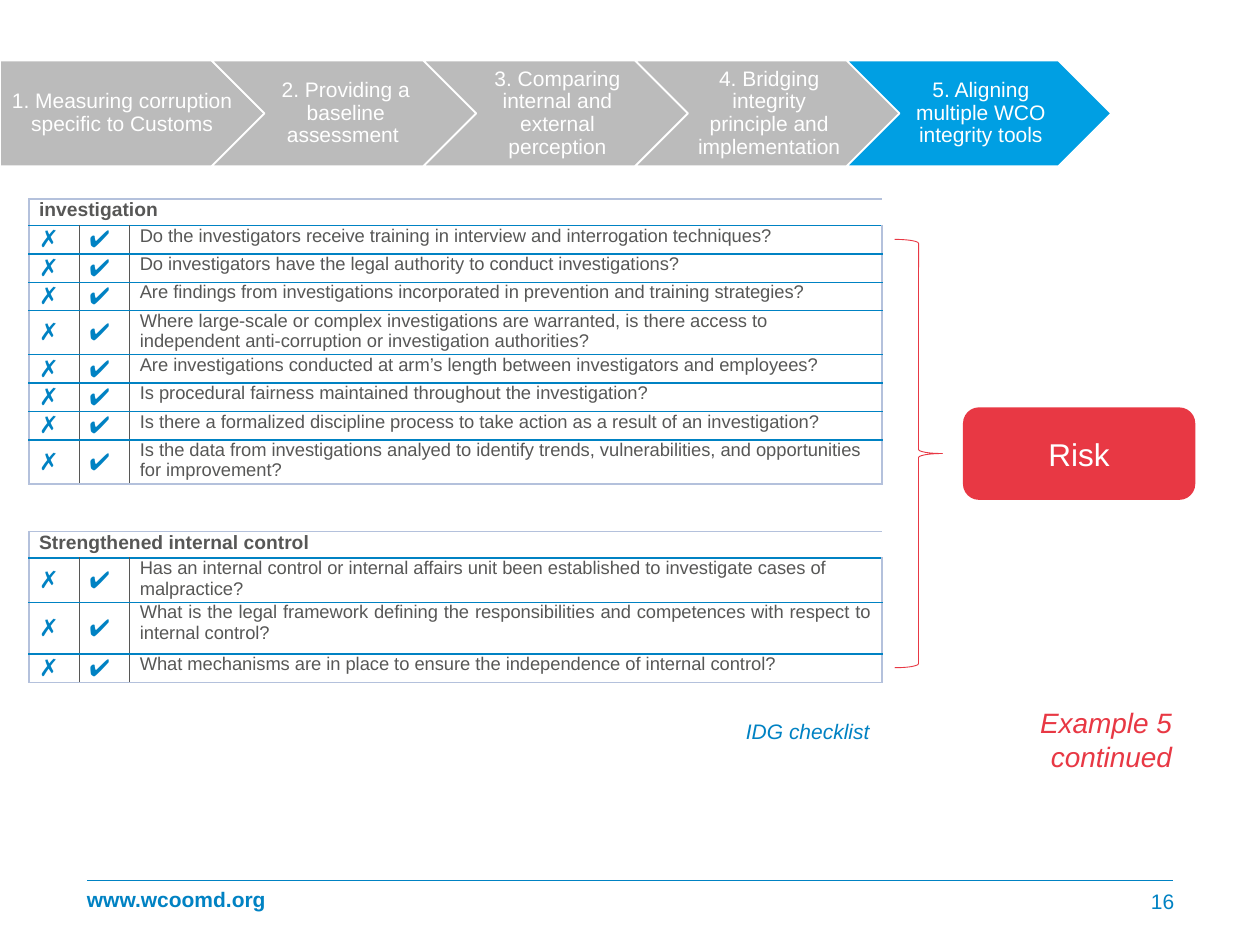
from dataclasses import dataclass
from typing import Optional

import pptx
import pptx.dml.color
import pptx.enum.shapes
import pptx.enum.text
import pptx.oxml.ns
import pptx.util
from lxml import etree

Inches = pptx.util.Inches
Pt = pptx.util.Pt
Shape = pptx.enum.shapes.MSO_SHAPE
Align = pptx.enum.text.PP_ALIGN
Anchor = pptx.enum.text.MSO_ANCHOR
qn = pptx.oxml.ns.qn

BLUE, RED, GREY, WHITE = "0082C3", "E83844", "575756", "FFFFFF"
STEP_GREY, STEP_ACTIVE, FRAME = "BBBBBB", "009FE3", "B4C1DC"
MARKS = ("✗", "✔")
COLUMN_WIDTHS = (0.4, 0.4, 5.97)
INDENT = 0.08


@dataclass
class Style:
    size: float
    color: str
    bold: bool = False
    italic: bool = False
    align: Align = Align.LEFT
    spacing: Optional[float] = None


@dataclass
class Question:
    text: str
    height: float = 0.22
    align: Align = Align.LEFT


@dataclass
class Checklist:
    title: str
    top: float
    questions: list[Question]


STEPS = [
    "1. Measuring corruption specific to Customs",
    "2. Providing a baseline assessment ",
    "3. Comparing internal and external perception",
    "4. Bridging integrity principle and implementation",
    "5. Aligning multiple WCO integrity tools",
]
CHECKLISTS = [
    Checklist("investigation", 1.58, [
        Question("Do the investigators receive training in interview and interrogation techniques?"),
        Question("Do investigators have the legal authority to conduct investigations?",
                 0.21, Align.JUSTIFY),
        Question("Are findings from investigations incorporated in prevention and training strategies?"),
        Question("Where large-scale or complex investigations are warranted, is there access to "
                 "independent anti-corruption or investigation authorities?", 0.32),
        Question("Are investigations conducted at arm’s length between investigators and employees?"),
        Question("Is procedural fairness maintained throughout the investigation?"),
        Question("Is there a formalized discipline process to take action as a result of an investigation?"),
        Question("Is the data from investigations analyed to identify trends, vulnerabilities, and "
                 "opportunities for improvement?", 0.32),
    ]),
    Checklist("Strengthened internal control", 4.22, [
        Question("Has an internal control or internal affairs unit been established to investigate "
                 "cases of malpractice?", 0.35),
        Question("What is the legal framework defining the responsibilities and competences with "
                 "respect to internal control?", 0.41, Align.JUSTIFY),
        Question("What mechanisms are in place to ensure the independence of internal control?"),
    ]),
]


def rgb(value: str) -> pptx.dml.color.RGBColor:
    return pptx.dml.color.RGBColor.from_string(value)


def write(frame, lines: list[str], style: Style) -> None:
    for index, line in enumerate(lines):
        paragraph = frame.add_paragraph() if index else frame.paragraphs[0]
        paragraph.alignment = style.align
        if style.spacing:
            paragraph.line_spacing = style.spacing
        run = paragraph.add_run()
        run.text = line
        run.font.name = "Arial"
        run.font.size = Pt(style.size)
        run.font.bold = style.bold
        run.font.italic = style.italic
        run.font.color.rgb = rgb(style.color)


def set_insets(frame, left: float, top: float, right: float, bottom: float) -> None:
    frame.margin_left, frame.margin_top = Inches(left), Inches(top)
    frame.margin_right, frame.margin_bottom = Inches(right), Inches(bottom)


def add_label(slide, box: tuple, lines: list[str], style: Style,
              anchor: Anchor = Anchor.TOP, insets: tuple = (0.1, 0.05, 0.1, 0.05)) -> None:
    frame = slide.shapes.add_textbox(*map(Inches, box)).text_frame
    frame.word_wrap = True
    frame.vertical_anchor = anchor
    set_insets(frame, *insets)
    write(frame, lines, style)


def add_figure(slide, kind: Shape, box: tuple, fill: Optional[str], line: str, weight: float):
    figure = slide.shapes.add_shape(kind, *map(Inches, box))
    figure.shadow.inherit = False
    if fill:
        figure.fill.solid()
        figure.fill.fore_color.rgb = rgb(fill)
    else:
        figure.fill.background()
    figure.line.color.rgb = rgb(line)
    figure.line.width = Pt(weight)
    figure.text_frame.word_wrap = True
    figure.text_frame.vertical_anchor = Anchor.MIDDLE
    return figure


def add_steps(slide) -> None:
    style = Style(12, WHITE, align=Align.CENTER, spacing=0.9)
    last = len(STEPS) - 1
    for index, step in enumerate(STEPS):
        arrow = add_figure(slide, Shape.CHEVRON if index else Shape.PENTAGON,
                           (1.68 * index, 0.48, 2.1, 0.84),
                           STEP_ACTIVE if index == last else STEP_GREY, WHITE, 1)
        set_insets(arrow.text_frame, 0.05 if index else 0.07, 0.04, 0.02, 0.04)
        write(arrow.text_frame, [step], style)


def add_border(cell, side: str, color: Optional[str], weight: float) -> None:
    edge = etree.SubElement(cell._tc.get_or_add_tcPr(), qn(f"a:ln{side}"), w=str(Pt(weight)))
    if color:
        etree.SubElement(etree.SubElement(edge, qn("a:solidFill")), qn("a:srgbClr"), val=color)
    else:
        etree.SubElement(edge, qn("a:noFill"))


def frame_cell(cell, row: int, column: int, last_row: int) -> None:
    divider = GREY if row else None
    last_column = len(COLUMN_WIDTHS) - 1
    add_border(cell, "L", divider if column else FRAME, 0.5 if column else 1)
    at_right = column == last_column
    add_border(cell, "R", FRAME if at_right else divider, 1 if at_right else 0.5)
    add_border(cell, "T", BLUE if row else FRAME, 1)
    add_border(cell, "B", FRAME if row == last_row else BLUE, 1)
    cell.fill.background()


def add_checklist(slide, checklist: Checklist) -> None:
    heights = [0.21] + [question.height for question in checklist.questions]
    grid = slide.shapes.add_table(len(heights), len(COLUMN_WIDTHS), Inches(0.23),
                                  Inches(checklist.top), Inches(sum(COLUMN_WIDTHS)),
                                  Inches(sum(heights))).table
    grid.first_row = grid.horz_banding = False
    for column, width in zip(grid.columns, COLUMN_WIDTHS):
        column.width = Inches(width)
    for row, height in enumerate(heights):
        grid.rows[row].height = Inches(height)
        for column in range(len(COLUMN_WIDTHS)):
            cell = grid.cell(row, column)
            set_insets(cell, INDENT, 0, INDENT if column == 2 else 0, 0)
            frame_cell(cell, row, column, len(heights) - 1)
    grid.cell(0, 0).merge(grid.cell(0, 2))
    write(grid.cell(0, 0).text_frame, [checklist.title], Style(11, GREY, bold=True))
    for row, question in enumerate(checklist.questions, start=1):
        for column, mark in enumerate(MARKS):
            cell = grid.cell(row, column)
            cell.vertical_anchor = Anchor.MIDDLE
            write(cell.text_frame, [mark], Style(13.5, BLUE, align=question.align))
        write(grid.cell(row, 2).text_frame, [question.text],
              Style(10.5, GREY, align=question.align))


def add_footer(slide) -> None:
    rule = slide.shapes.add_connector(pptx.enum.shapes.MSO_CONNECTOR.STRAIGHT,
                                      Inches(0.69), Inches(6.99), Inches(9.31), Inches(6.99))
    rule.line.color.rgb = rgb(BLUE)
    rule.line.width = Pt(0.5)
    etree.SubElement(rule._element.spPr, qn("a:effectLst"))
    add_label(slide, (0.69, 6.95, 1.46, 0.4), ["www.wcoomd.org"],
              Style(12, BLUE, bold=True, spacing=0.9), Anchor.MIDDLE, (0, 0.05, 0, 0.05))
    add_label(slide, (8.68, 6.95, 0.64, 0.4), ["16"],
              Style(12, BLUE, align=Align.RIGHT), Anchor.MIDDLE, (0.1, 0.05, 0, 0.05))


def main() -> None:
    deck = pptx.Presentation()
    deck.slide_width, deck.slide_height = Inches(10), Inches(7.5)
    slide = deck.slides.add_slide(deck.slide_layouts[6])
    add_footer(slide)
    add_steps(slide)
    risk = add_figure(slide, Shape.ROUNDED_RECTANGLE, (7.65, 3.24, 1.83, 0.72), RED, RED, 1)
    write(risk.text_frame, ["Risk"], Style(18, WHITE, align=Align.CENTER))
    add_figure(slide, Shape.RIGHT_BRACE, (7.1, 1.9, 0.38, 3.4), None, RED, 0.5)
    for checklist in CHECKLISTS:
        add_checklist(slide, checklist)
    add_label(slide, (6.92, 5.55, 2.48, 0.64), ["Example 5", "continued"],
              Style(16, RED, italic=True, align=Align.RIGHT))
    add_label(slide, (3.84, 5.65, 3.16, 0.3), ["IDG checklist"],
              Style(12, BLUE, italic=True, align=Align.RIGHT))
    deck.save("out.pptx")


if __name__ == "__main__":
    main()
